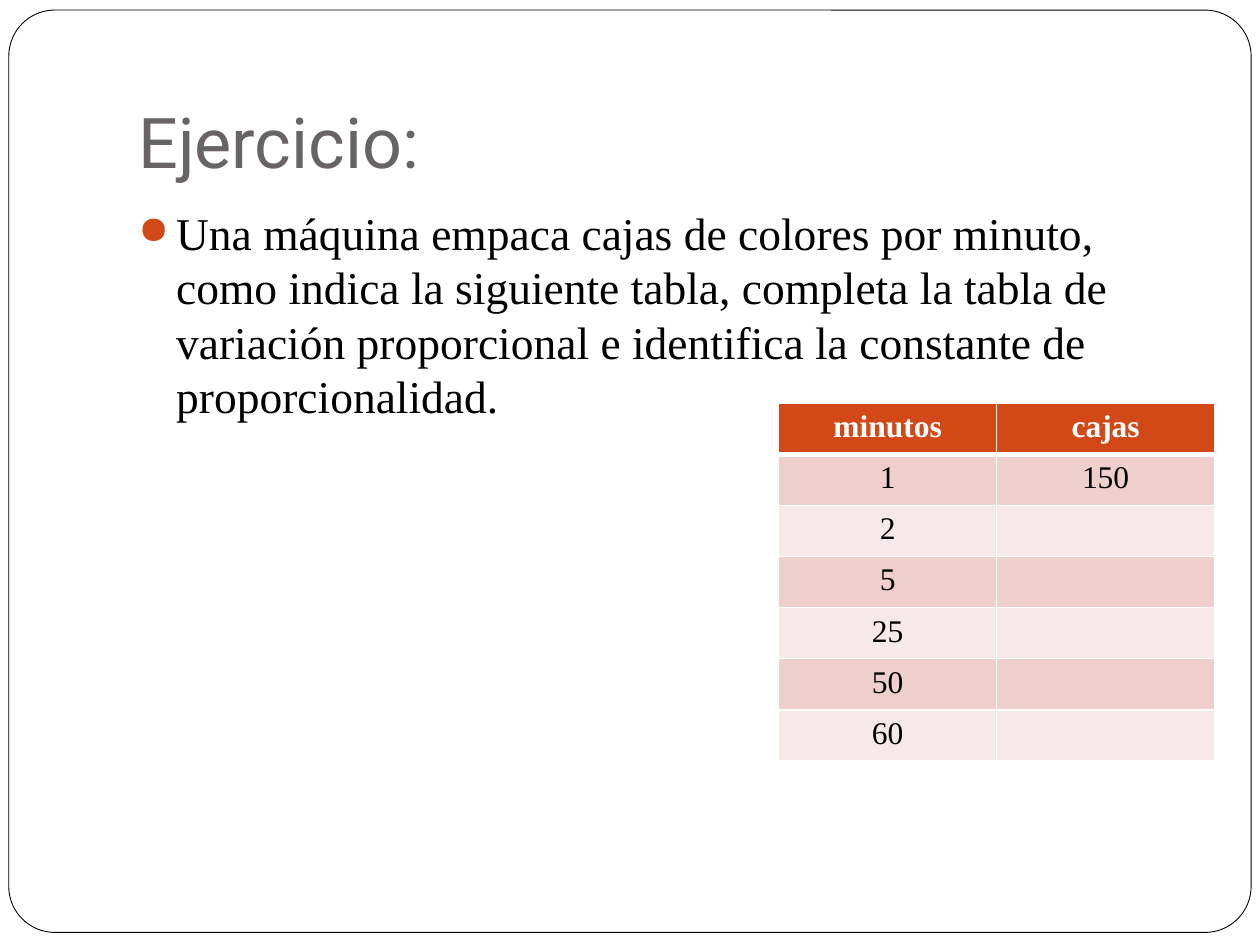
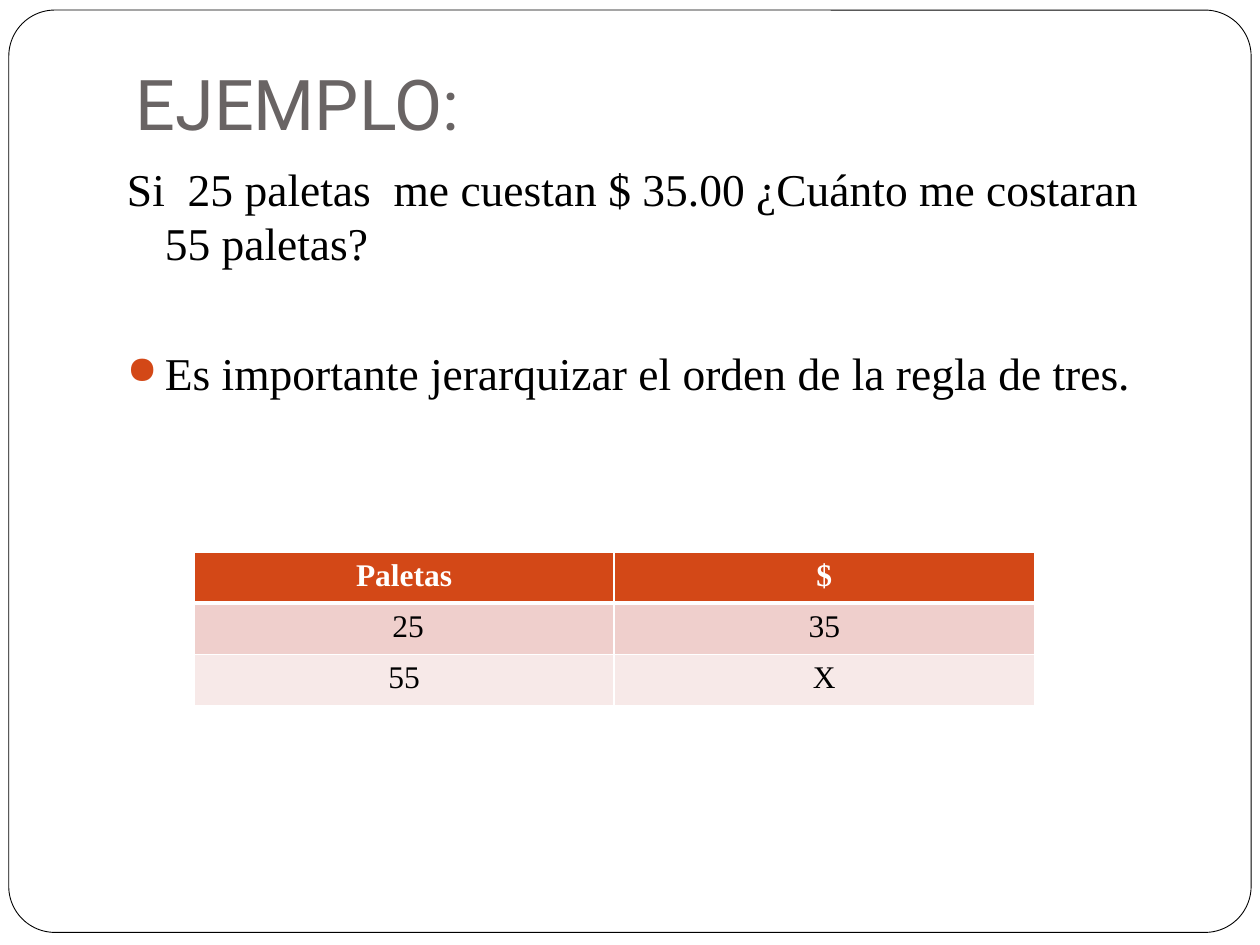
from lxml.etree import SubElement
from pptx import Presentation
from pptx.dml.color import RGBColor
from pptx.enum.shapes import MSO_SHAPE
from pptx.enum.text import MSO_ANCHOR, PP_ALIGN
from pptx.oxml import parse_xml
from pptx.oxml.ns import nsdecls, qn
from pptx.util import Inches, Pt

# Content: body paragraphs are (text, bulleted, space before in points)
SLIDES = [
    {
        "title": ("Ejercicio:", 1, 0.3),
        "body": (1, 1.58, [
            ("Una máquina empaca cajas de colores por minuto, como indica la "
             "siguiente tabla, completa la tabla de variación proporcional e "
             "identifica la constante de proporcionalidad.", True, 5.8),
        ]),
        "table": ((6.18, 3.2, 3.46, 2.84), [
            ("minutos", "cajas"), ("1", "150"), ("2", ""), ("5", ""),
            ("25", ""), ("50", ""), ("60", ""),
        ]),
    },
    {
        "title": ("EJEMPLO:", 0.98, 0),
        "body": (0.91, 1.23, [
            ("Si  25 paletas  me cuestan $ 35.00 ¿Cuánto me costaran "
             "55 paletas?", False, 5.8),
            ("Es importante jerarquizar el orden de la regla de tres.",
             True, 42.7),
        ]),
        "table": ((1.54, 4.38, 6.67, 1.22), [
            ("Paletas", "$"), (" 25", "35"), ("55", "X"),
        ]),
    },
]

# Shared style
WIDTH, HEIGHT = 10, 7.5
TEXT_WIDTH, TITLE_HEIGHT, BODY_HEIGHT = 8.5, 1.25, 5
HEAD_FONT, BODY_FONT = "Roboto", "Times New Roman"
WHITE, BLACK, GRAY, ACCENT = "FFFFFF", "000000", "696464", "D34817"
BANDS = ("F7E9E8", "EFCFCC")
INDENT, LINE_PITCH = 0.3, 31.1


def rgb(color):
    return RGBColor.from_string(color)


def add_run(p, text, size, font, color, bold=False):
    r = p.add_run()
    r.text = text
    r.font.size, r.font.name, r.font.bold = Pt(size), font, bold
    r.font.color.rgb = rgb(color)


def add_text_frame(s, x, y, h):
    tf = s.shapes.add_textbox(*map(Inches, (x, y, TEXT_WIDTH, h))).text_frame
    tf.word_wrap = True
    return tf


def add_frame(s):
    s.background.fill.solid()
    s.background.fill.fore_color.rgb = rgb(WHITE)
    sp = s.shapes.add_shape(MSO_SHAPE.ROUNDED_RECTANGLE,
                            *map(Inches, (0.07, 0.08, 9.86, 7.32)))
    sp.adjustments[0] = 0.05
    sp.shadow.inherit = False
    sp.fill.solid()
    sp.fill.fore_color.rgb = rgb(WHITE)
    sp.line.color.rgb = rgb(BLACK)
    sp.line.width = Pt(0.5)


def add_title(s, text, x, y):
    tf = add_text_frame(s, x, y, TITLE_HEIGHT)
    tf.vertical_anchor = MSO_ANCHOR.BOTTOM
    tf.margin_bottom = Inches(0.1)
    add_run(tf.paragraphs[0], text, 40, HEAD_FONT, GRAY)


def set_hanging(p, bulleted):
    pPr = p._p.get_or_add_pPr()
    pPr.set("marL", str(Inches(INDENT)))
    pPr.set("indent", str(-Inches(INDENT)))
    if bulleted:
        color = SubElement(pPr, qn("a:buClr"))
        SubElement(color, qn("a:srgbClr"), val=ACCENT)
        SubElement(pPr, qn("a:buSzPct"), val="85000")
        SubElement(pPr, qn("a:buChar"), char="●")
    else:
        SubElement(pPr, qn("a:buNone"))


def add_body(s, x, y, paragraphs):
    tf = add_text_frame(s, x, y, BODY_HEIGHT)
    for i, (text, bulleted, before) in enumerate(paragraphs):
        p = tf.add_paragraph() if i else tf.paragraphs[0]
        p.line_spacing, p.space_before = Pt(LINE_PITCH), Pt(before)
        set_hanging(p, bulleted)
        add_run(p, text, 26, BODY_FONT, BLACK)


def set_borders(cell, row):
    # The rule under the header is thicker than the others
    widths = {"L": 1, "R": 1, "T": 3 if row == 1 else 1,
              "B": 3 if row == 0 else 1}
    tcPr = cell._tc.get_or_add_tcPr()
    for i, (side, width) in enumerate(widths.items()):
        tcPr.insert(i, parse_xml(
            f'<a:ln{side} {nsdecls("a")} w="{Pt(width)}"><a:solidFill>'
            f'<a:srgbClr val="{WHITE}"/></a:solidFill></a:ln{side}>'))


def add_grid(s, box, rows):
    table = s.shapes.add_table(len(rows), len(rows[0]),
                               *map(Inches, box)).table
    for tr in table.rows:
        tr.height = Inches(box[3] / len(rows))
    for i, row in enumerate(rows):
        header = i == 0
        for j, text in enumerate(row):
            cell = table.cell(i, j)
            cell.fill.solid()
            cell.fill.fore_color.rgb = rgb(ACCENT if header else BANDS[i % 2])
            set_borders(cell, i)
            p = cell.text_frame.paragraphs[0]
            p.alignment = PP_ALIGN.CENTER
            if text:
                add_run(p, text, 18, BODY_FONT,
                        WHITE if header else BLACK, header)


def main():
    prs = Presentation()
    prs.slide_width, prs.slide_height = Inches(WIDTH), Inches(HEIGHT)
    for content in SLIDES:
        s = prs.slides.add_slide(prs.slide_layouts[6])
        add_frame(s)
        add_title(s, *content["title"])
        add_body(s, *content["body"])
        add_grid(s, *content["table"])
    prs.save("out.pptx")


if __name__ == "__main__":
    main()
